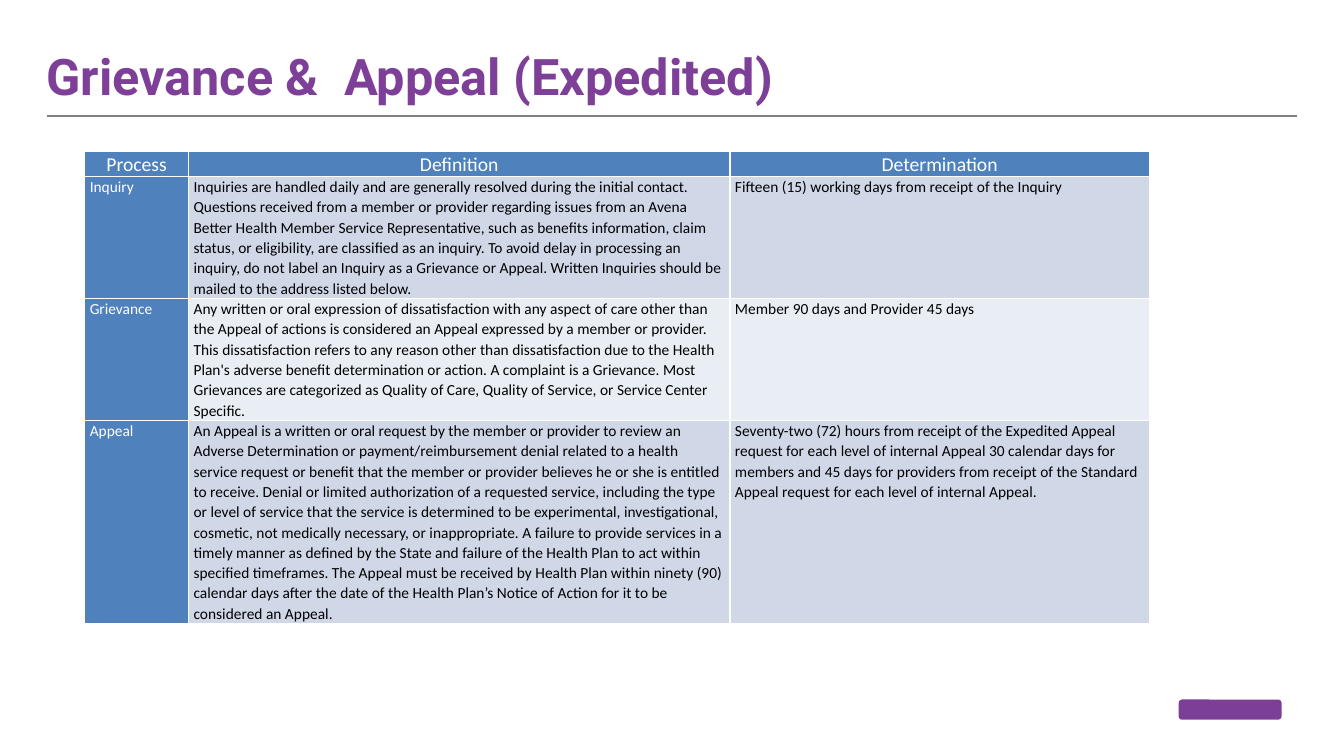
from dataclasses import dataclass

from lxml import etree
from pptx import Presentation
from pptx.dml.color import RGBColor
from pptx.enum.shapes import MSO_CONNECTOR, MSO_SHAPE
from pptx.enum.text import MSO_ANCHOR, PP_ALIGN
from pptx.oxml.ns import qn
from pptx.util import Inches, Pt

PURPLE = RGBColor(0x7D, 0x3F, 0x98)
LOGO_PURPLE = RGBColor(0x7C, 0x3E, 0x97)
GRAY = RGBColor(0x80, 0x80, 0x80)
BLUE = RGBColor(0x4F, 0x81, 0xBD)
BAND_DARK = RGBColor(0xD0, 0xD8, 0xE8)
BAND_LIGHT = RGBColor(0xE9, 0xED, 0xF4)
WHITE = RGBColor(0xFF, 0xFF, 0xFF)
BLACK = RGBColor(0x00, 0x00, 0x00)

LEFT, CENTER = PP_ALIGN.LEFT, PP_ALIGN.CENTER
TOP, MIDDLE = MSO_ANCHOR.TOP, MSO_ANCHOR.MIDDLE
STRAIGHT = MSO_CONNECTOR.STRAIGHT
ROUNDED = MSO_SHAPE.ROUNDED_RECTANGLE


@dataclass(frozen=True)
class Process:
    name: str
    definition: str
    determination: str
    height: float


HEADINGS = ("Process", "Definition", "Determination")
HEADING_HEIGHT = 0.25
COLUMN_WIDTHS = (1.03, 5.37, 4.16)
PROCESSES = (
    Process(
        "Inquiry",
        "Inquiries are handled daily and are generally resolved during the initial contact. "
        "Questions received from a member or provider regarding issues from an Avena Better "
        "Health Member Service Representative, such as benefits information, claim status, or "
        "eligibility, are classified as an inquiry. To avoid delay in processing an inquiry, do "
        "not label an Inquiry as a Grievance or Appeal. Written Inquiries should be mailed to "
        "the address listed below.",
        "Fifteen (15) working days from receipt of the Inquiry",
        1.21,
    ),
    Process(
        "Grievance",
        "Any written or oral expression of dissatisfaction with any aspect of care other than "
        "the Appeal of actions is considered an Appeal expressed by a member or provider. This "
        "dissatisfaction refers to any reason other than dissatisfaction due to the Health "
        "Plan's adverse benefit determination or action. A complaint is a Grievance. Most "
        "Grievances are categorized as Quality of Care, Quality of Service, or Service Center "
        "Specific.",
        "Member 90 days and Provider 45 days",
        1.21,
    ),
    Process(
        "Appeal",
        "An Appeal is a written or oral request by the member or provider to review an Adverse "
        "Determination or payment/reimbursement denial related to a health service request or "
        "benefit that the member or provider believes he or she is entitled to receive. Denial "
        "or limited authorization of a requested service, including the type or level of "
        "service that the service is determined to be experimental, investigational, cosmetic, "
        "not medically necessary, or inappropriate. A failure to provide services in a timely "
        "manner as defined by the State and failure of the Health Plan to act within specified "
        "timeframes. The Appeal must be received by Health Plan within ninety (90) calendar "
        "days after the date of the Health Plan’s Notice of Action for it to be considered an "
        "Appeal.",
        "Seventy-two (72) hours from receipt of the Expedited Appeal request for each level of "
        "internal Appeal 30 calendar days for members and 45 days for providers from receipt of "
        "the Standard Appeal request for each level of internal Appeal.",
        2.02,
    ),
)


def write_text(frame, text: str, *, size: float, color: RGBColor, font: str = "Calibri",
               bold: bool = False, align=LEFT, spacing: float = 1.0) -> None:
    frame.word_wrap = True
    paragraph = frame.paragraphs[0]
    paragraph.alignment = align
    paragraph.line_spacing = spacing
    run = paragraph.add_run()
    run.text = text
    run.font.name = font
    run.font.size = Pt(size)
    run.font.bold = bold
    run.font.color.rgb = color


def set_borders(cell) -> None:
    properties = cell._tc.get_or_add_tcPr()
    for side in "LRTB":
        line = etree.SubElement(properties, qn(f"a:ln{side}"), w=str(Pt(1)))
        fill = etree.SubElement(line, qn("a:solidFill"))
        etree.SubElement(fill, qn("a:srgbClr"), val=str(WHITE))


def fill_cell(cell, text: str, *, fill: RGBColor, color: RGBColor, size: float = 11,
              align=LEFT) -> None:
    cell.margin_left = cell.margin_right = Inches(0.05)
    cell.margin_top = cell.margin_bottom = 0
    cell.vertical_anchor = TOP
    set_borders(cell)
    cell.fill.solid()
    cell.fill.fore_color.rgb = fill
    write_text(cell.text_frame, text, size=size, color=color, align=align, spacing=1.07)


def add_title(slide) -> None:
    title = slide.shapes.add_textbox(Inches(0.46), Inches(0.35), Inches(10.39), Inches(0.8))
    frame = title.text_frame
    frame.margin_left = frame.margin_right = frame.margin_top = frame.margin_bottom = 0
    frame.vertical_anchor = MIDDLE
    write_text(frame, "Grievance &  Appeal (Expedited)", size=36, color=PURPLE,
               font="Roboto", bold=True)

    rule = slide.shapes.add_connector(
        STRAIGHT, Inches(0.47), Inches(1.15), Inches(12.86), Inches(1.15))
    rule.line.color.rgb = GRAY
    rule.line.width = Pt(1)
    etree.SubElement(rule._element.spPr, qn("a:effectLst"))


def add_process_table(slide) -> None:
    heights = (HEADING_HEIGHT, *(process.height for process in PROCESSES))
    table = slide.shapes.add_table(
        len(heights), len(HEADINGS), Inches(0.84), Inches(1.5),
        Inches(sum(COLUMN_WIDTHS)), Inches(sum(heights))).table
    table.first_col = True
    for column, width in zip(table.columns, COLUMN_WIDTHS):
        column.width = Inches(width)
    for row, height in zip(table.rows, heights):
        row.height = Inches(height)

    for column, heading in enumerate(HEADINGS):
        fill_cell(table.cell(0, column), heading, fill=BLUE, color=WHITE, size=14,
                  align=CENTER)
    for row, process in enumerate(PROCESSES, start=1):
        band = BAND_DARK if row % 2 else BAND_LIGHT
        fill_cell(table.cell(row, 0), process.name, fill=BLUE, color=WHITE)
        fill_cell(table.cell(row, 1), process.definition, fill=band, color=BLACK)
        fill_cell(table.cell(row, 2), process.determination, fill=band, color=BLACK)


def add_logo_mark(slide) -> None:
    mark = slide.shapes.add_shape(
        ROUNDED, Inches(11.69), Inches(6.94), Inches(1.02), Inches(0.2))
    mark.shadow.inherit = False
    mark.fill.solid()
    mark.fill.fore_color.rgb = LOGO_PURPLE
    mark.line.fill.background()


def main() -> None:
    presentation = Presentation()
    presentation.slide_width = Inches(13.33)
    presentation.slide_height = Inches(7.5)
    slide = presentation.slides.add_slide(presentation.slide_layouts[6])

    # Brand mark, heading with its rule, then the process table
    add_logo_mark(slide)
    add_title(slide)
    add_process_table(slide)

    presentation.save("out.pptx")


if __name__ == "__main__":
    main()
